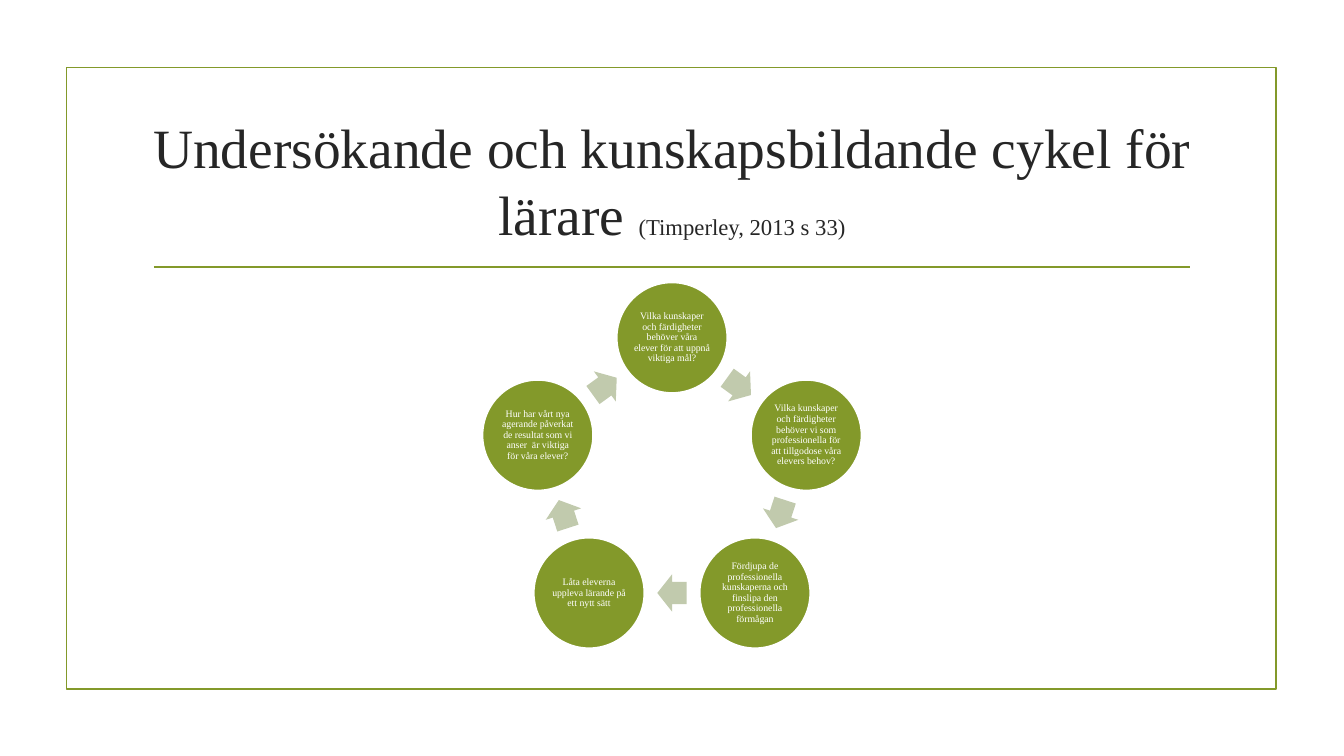
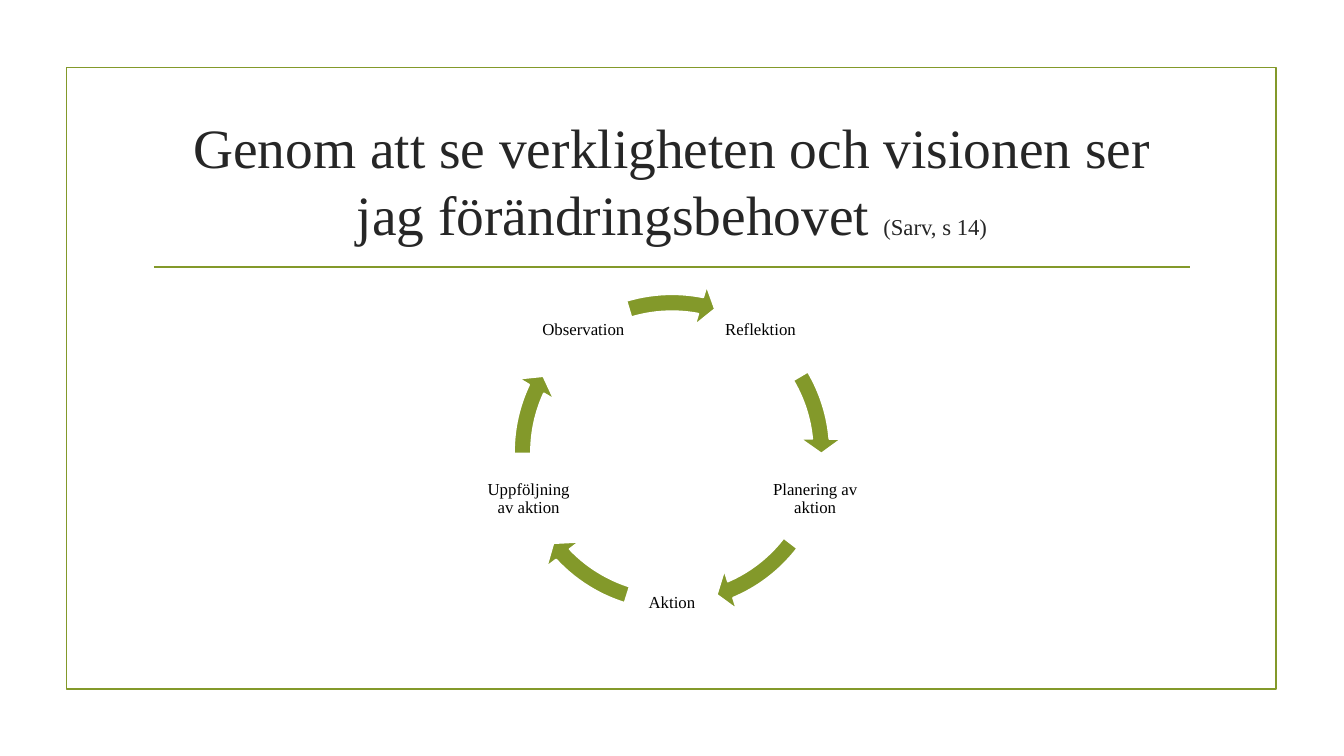
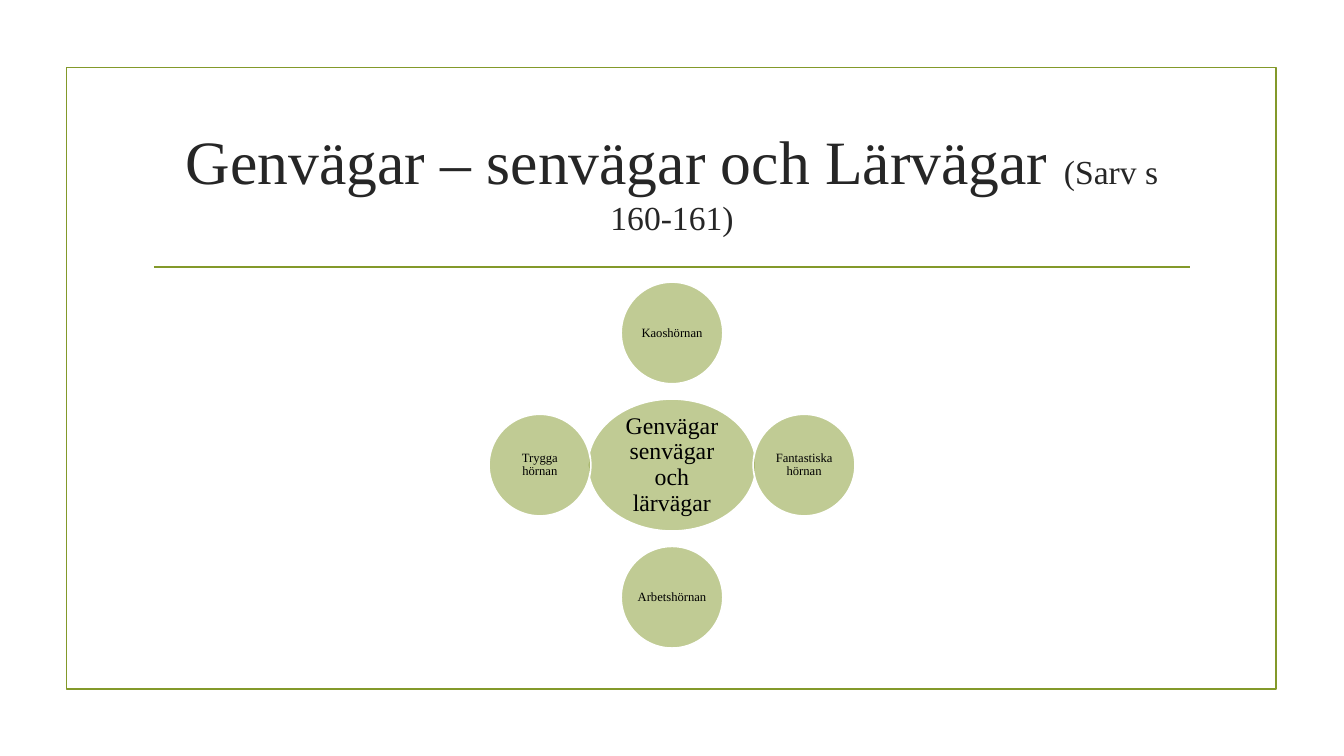
from math import cos, radians, sin

from lxml import etree
from pptx import Presentation
from pptx.dml.color import RGBColor
from pptx.enum.shapes import MSO_CONNECTOR, MSO_SHAPE
from pptx.enum.text import MSO_ANCHOR, MSO_AUTO_SIZE, PP_ALIGN
from pptx.oxml.ns import qn
from pptx.util import Pt

ELLIPSE, ARROW = MSO_SHAPE.OVAL, MSO_SHAPE.RIGHT_ARROW
ARC_ARROW, RECT = MSO_SHAPE.CIRCULAR_ARROW, MSO_SHAPE.RECTANGLE
STRAIGHT = MSO_CONNECTOR.STRAIGHT
CENTER, MIDDLE, NO_FIT = PP_ALIGN.CENTER, MSO_ANCHOR.MIDDLE, MSO_AUTO_SIZE.NONE

FONT = "Times New Roman"
GREEN, PALE, WHITE, BLACK, DARK = "83992A", "C1CAAD", "FFFFFF", "000000", "262626"
MID_X = 480

# Content: title runs are (text, size)
INQUIRY_TITLE = [("Undersökande och kunskapsbildande cykel för lärare ", 39.6),
                 ("(Timperley, 2013 s 33)", 16.2)]
INQUIRY_STEPS = [
    "Vilka kunskaper och färdigheter behöver våra elever för att uppnå viktiga mål?",
    "Vilka kunskaper och färdigheter behöver vi som professionella för att "
    "tillgodose våra elevers behov?",
    "Fördjupa de professionella kunskaperna och finslipa den professionella förmågan",
    "Låta eleverna uppleva lärande på ett nytt sätt",
    "Hur har vårt nya agerande påverkat de resultat som vi anser  är viktiga "
    "för våra elever?",
]

ACTION_TITLE = [("Genom att se verkligheten och visionen ser jag förändringsbehovet ", 39.6),
                ("(Sarv, s 14)", 16.2)]
# Label, then start and end angle in degrees of the arrow that follows it
ACTION_STEPS = [
    ("Reflektion", 329.4, 354.92),
    ("Planering av aktion", 37.52, 66.95),
    ("Aktion", 107.46, 136.89),
    ("Uppföljning av aktion", 179.49, 205),
    ("Observation", 253.28, 281.13),
]

CORNERS_TITLE = [("Genvägar – senvägar och Lärvägar ", 44), ("(Sarv s 160-161)", 24)]
HUB = "Genvägar senvägar och lärvägar"
CORNERS = ["Kaoshörnan", "Fantastiska hörnan", "Arbetshörnan", "Trygga hörnan"]


def rgb(color):
    return RGBColor.from_string(color)


def around(cy, radius, degrees):
    """Point on a circle, clockwise from the top."""
    a = radians(degrees)
    return MID_X + radius * sin(a), cy - radius * cos(a)


def add_runs(tf, runs, color, spacing=None):
    tf.word_wrap = True
    tf.auto_size = NO_FIT
    tf.vertical_anchor = MIDDLE
    p = tf.paragraphs[0]
    p.alignment = CENTER
    if spacing:
        p.line_spacing = spacing
    for text, size in runs:
        r = p.add_run()
        r.text = text
        r.font.name, r.font.size = FONT, Pt(size)
        r.font.color.rgb = rgb(color)


def add_label(sp, text, size, color, inset):
    tf = sp.text_frame
    tf.margin_left = tf.margin_right = tf.margin_top = tf.margin_bottom = Pt(inset)
    add_runs(tf, [(text, size)], color, 0.9)


def add_shape(slide, kind, center, w, h, fill=None, line=None, alpha=None):
    x, y = center
    sp = slide.shapes.add_shape(kind, Pt(x - w / 2), Pt(y - h / 2), Pt(w), Pt(h))
    sp.shadow.inherit = False
    if fill:
        sp.fill.solid()
        sp.fill.fore_color.rgb = rgb(fill)
    else:
        sp.fill.background()
    if alpha:
        clr = sp.fill._xPr.find(qn("a:solidFill"))[0]
        etree.SubElement(clr, qn("a:alpha")).set("val", str(alpha * 1000))
    if line:
        sp.line.color.rgb = rgb(line)
        sp.line.width = Pt(1.25)
    else:
        sp.line.fill.background()
    return sp


def add_slide(prs, title_runs):
    slide = prs.slides.add_slide(prs.slide_layouts[5])
    sp = slide.shapes.title
    sp.left, sp.top, sp.width, sp.height = Pt(102), Pt(77), Pt(756), Pt(103)
    add_runs(sp.text_frame, title_runs, DARK)
    return slide


def move_frame_to_layout(slide):
    """Draw the frame and title rule once, then let the layout carry them."""
    frame = add_shape(slide, RECT, (479.5, 270.3), 864, 444.2, line=GREEN)
    rule = slide.shapes.add_connector(STRAIGHT, Pt(110), Pt(190.8), Pt(850.3), Pt(190.8))
    rule.line.color.rgb = rgb(GREEN)
    rule.line.width = Pt(1.25)
    etree.SubElement(rule._element.spPr, qn("a:effectLst"))
    tree = slide.slide_layout.shapes.element
    for sp in (frame, rule):
        tree.append(sp._element)


def add_inquiry_cycle(slide):
    cy, radius, step = 342, 100.8, 360 / len(INQUIRY_STEPS)
    for i, text in enumerate(INQUIRY_STEPS):
        sp = add_shape(slide, ELLIPSE, around(cy, radius, i * step), 79, 79, GREEN, WHITE)
        add_label(sp, text, 7, WHITE, 0.7)
        turn = (i + 0.5) * step
        apothem = radius * cos(radians(step / 2))
        sp = add_shape(slide, ARROW, around(cy, apothem, turn), 21, 26.6, PALE)
        sp.adjustments[0], sp.adjustments[1] = 0.6, 0.5
        sp.rotation = turn


def add_action_cycle(slide):
    cy, radius, size, step = 323, 107.6, 242.6, 360 / len(ACTION_STEPS)
    box = 64.8
    for i, (text, start, end) in enumerate(ACTION_STEPS):
        x, y = around(cy, radius, (i + 0.5) * step)
        tb = slide.shapes.add_textbox(Pt(x - box / 2), Pt(y - box / 2), Pt(box), Pt(box))
        add_label(tb, text, 12, BLACK, 1.4)
        sp = add_shape(slide, ARC_ARROW, (MID_X, cy), size, size, GREEN, WHITE)
        # Angles count in 60000ths of a degree, adjustments in 100000ths
        for k, value in enumerate((0.05, 3.35, end * 0.6, start * 0.6, 0.06)):
            sp.adjustments[k] = value


def add_corners(slide):
    cy, radius, step = 332.2, 94.4, 360 / len(CORNERS)
    sp = add_shape(slide, ELLIPSE, (MID_X, cy), 120.2, 94.4, GREEN, WHITE, 50)
    add_label(sp, HUB, 17, BLACK, 1.4)
    for i, text in enumerate(CORNERS):
        sp = add_shape(slide, ELLIPSE, around(cy, radius, i * step), 72.7, 72.7,
                       GREEN, WHITE, 50)
        add_label(sp, text, 9, BLACK, 0.7)


def main():
    prs = Presentation()
    prs.slide_width, prs.slide_height = Pt(960), Pt(540)
    slide = add_slide(prs, INQUIRY_TITLE)
    move_frame_to_layout(slide)
    add_inquiry_cycle(slide)
    add_action_cycle(add_slide(prs, ACTION_TITLE))
    add_corners(add_slide(prs, CORNERS_TITLE))
    prs.save("out.pptx")


if __name__ == "__main__":
    main()
